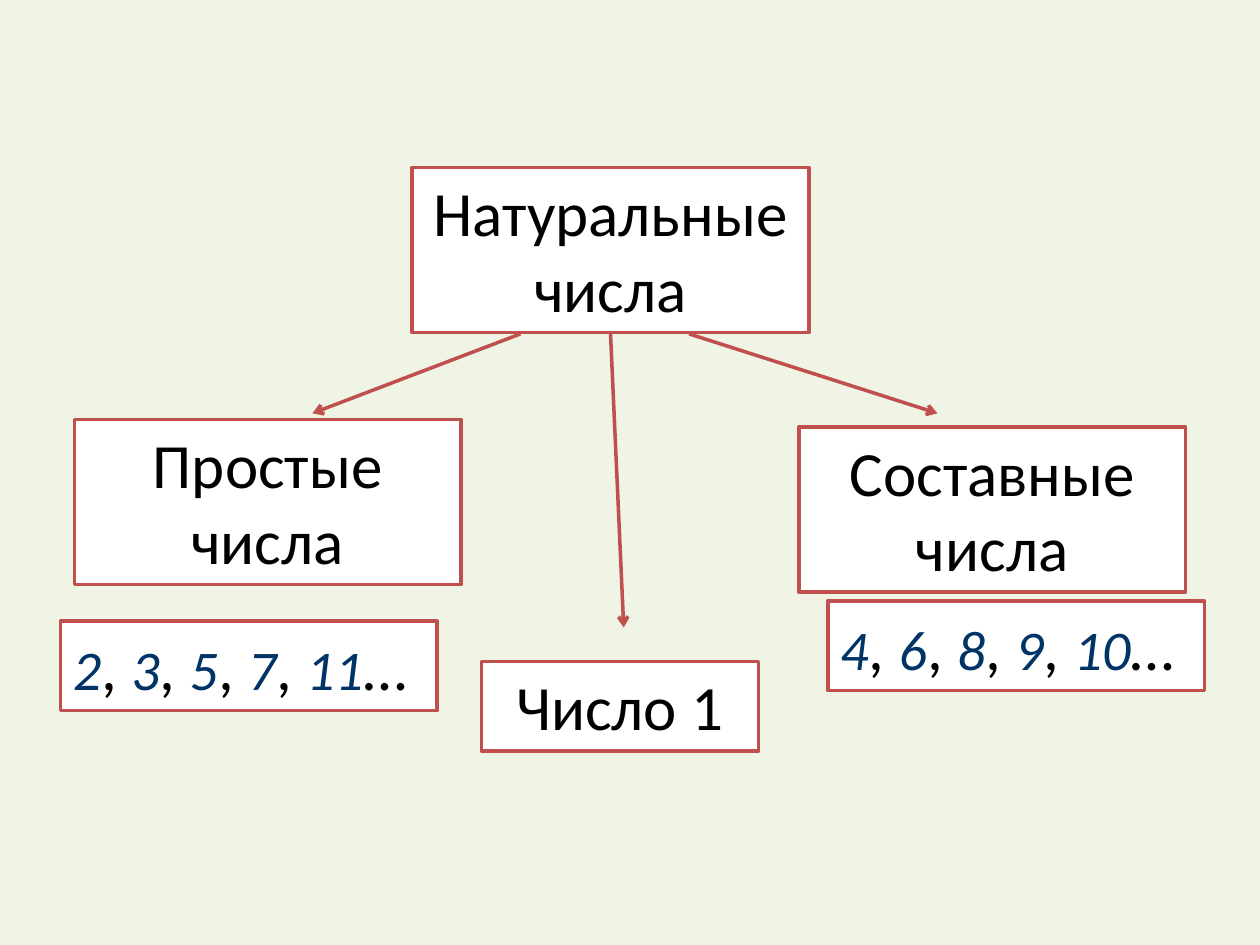
from pptx import Presentation
from pptx.dml.color import RGBColor
from pptx.enum.shapes import MSO_CONNECTOR
from pptx.enum.text import MSO_AUTO_SIZE, PP_ALIGN
from pptx.oxml.ns import qn
from pptx.util import Inches, Pt
from lxml.etree import SubElement

BACKGROUND = RGBColor(0xEF, 0xF4, 0xE5)
WHITE = RGBColor(0xFF, 0xFF, 0xFF)
BLACK = RGBColor(0x00, 0x00, 0x00)
RED = RGBColor(0xC0, 0x50, 0x4D)
NAVY = RGBColor(0x00, 0x33, 0x66)


def add_framed_box(left, top, width, height, alignment):
    """Add a white box with a red frame and return it with its paragraph."""
    box = slide.shapes.add_textbox(Inches(left), Inches(top), Inches(width), Inches(height))
    box.fill.solid()
    box.fill.fore_color.rgb = WHITE
    box.line.color.rgb = RED
    box.line.width = Pt(2)
    box.text_frame.word_wrap = True
    box.text_frame.auto_size = MSO_AUTO_SIZE.SHAPE_TO_FIT_TEXT
    para = box.text_frame.paragraphs[0]
    para.alignment = alignment
    return box, para


def add_span(para, text, size=36, color=BLACK, italic=False):
    span = para.add_run()
    span.text = text
    span.font.name = "Calibri"
    span.font.size = Pt(size)
    span.font.color.rgb = color
    span.font.italic = italic


deck = Presentation()
deck.slide_width = Inches(10)
deck.slide_height = Inches(7.5)
slide = deck.slides.add_slide(deck.slide_layouts[6])
slide.background.fill.solid()
slide.background.fill.fore_color.rgb = BACKGROUND

# Classes of numbers
classes = [
    ("Число 1", 3.82, 5.25, 2.2, 0.71),
    ("Составные числа", 6.34, 3.39, 3.07, 1.31),
    ("Простые числа", 0.59, 3.33, 3.07, 1.31),
    ("Натуральные числа", 3.27, 1.33, 3.15, 1.31),
]
boxes = {}
for name, left, top, width, height in classes:
    boxes[name], para = add_framed_box(left, top, width, height, PP_ALIGN.CENTER)
    add_span(para, name)

# Arrows from the natural numbers to each class
arrows = []
for start_x, start_y, end_x, end_y in [
    (4.87, 2.64, 4.95, 4.98),
    (4.13, 2.65, 2.48, 3.28),
    (5.47, 2.65, 7.44, 3.28),
]:
    arrow = slide.shapes.add_connector(
        MSO_CONNECTOR.STRAIGHT, Inches(start_x), Inches(start_y), Inches(end_x), Inches(end_y))
    arrow.line.color.rgb = RED
    arrow.line.width = Pt(2)
    SubElement(arrow.line._get_or_add_ln(), qn("a:tailEnd"), type="arrow")
    SubElement(arrow._element.spPr, qn("a:effectLst"))
    arrows.append(arrow)
arrows[0].begin_connect(boxes["Натуральные числа"], 2)

# Examples of prime and composite numbers
for numbers, left, top in [
    (("2", "3", "5", "7", "11"), 0.48, 4.93),
    (("4", "6", "8", "9", "10"), 6.57, 4.77),
]:
    box, para = add_framed_box(left, top, 2.99, 0.71, PP_ALIGN.LEFT)
    for number in numbers:
        add_span(para, number, 32, NAVY, True)
        add_span(para, "…" if number == numbers[-1] else ", ")

deck.save("out.pptx")
